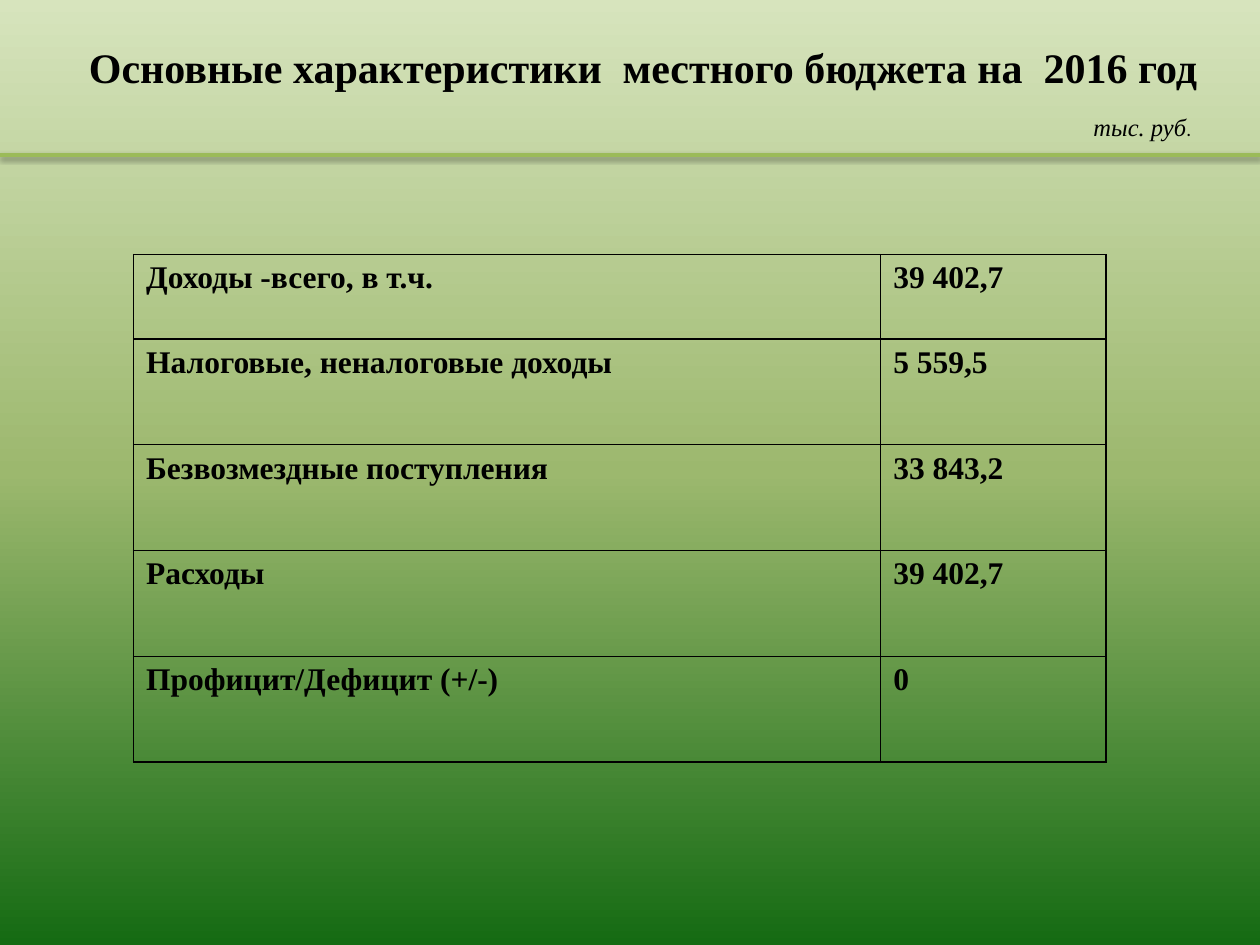
from copy import deepcopy

from lxml import etree
from pptx import Presentation
from pptx.dml.color import RGBColor
from pptx.enum.shapes import MSO_CONNECTOR
from pptx.enum.text import MSO_ANCHOR, PP_ALIGN
from pptx.oxml.ns import qn
from pptx.util import Inches, Pt

STRAIGHT = MSO_CONNECTOR.STRAIGHT
TOP = MSO_ANCHOR.TOP
CENTER = PP_ALIGN.CENTER
TITLE_ONLY = 5

COLORS = {"light": "D7E4BD", "middle": "9CB86E", "dark": "156B13",
          "rule": "9BBB59", "black": "000000"}
SERIF, SANS = "Times New Roman", "Calibri"

BUDGET = [
    ("Доходы -всего, в т.ч.", "39 402,7"),
    ("Налоговые, неналоговые доходы", "5 559,5"),
    ("Безвозмездные поступления", "33 843,2"),
    ("Расходы", "39 402,7"),
    ("Профицит/Дефицит (+/-)", "0"),
]
COL_WIDTHS = (5.93, 1.79)
ROW_HEIGHTS = (0.67, 0.84, 0.84, 0.84, 0.84)


def rgb(name):
    return RGBColor.from_string(COLORS[name])


def add_run(p, text, size, font=SERIF, bold=False, italic=False):
    r = p.add_run()
    r.text = text
    r.font.size = Pt(size)
    r.font.name = font
    r.font.bold = bold
    r.font.italic = italic
    r.font.color.rgb = rgb("black")


def set_background(s):
    """Fill the slide with a three-stop gradient running downwards."""
    fill = s.background.fill
    fill.gradient()
    fill.gradient_angle = 270
    gs_list = s.element.find(".//" + qn("a:gsLst"))
    gs_list.append(deepcopy(gs_list[-1]))
    for stop, position, name in zip(fill.gradient_stops, (0, 0.5, 1),
                                    ("light", "middle", "dark")):
        stop.position = position
        stop.color.rgb = rgb(name)


def add_title(s, text):
    title = s.shapes.title
    title.left, title.top = Inches(0.52), Inches(0.28)
    title.width, title.height = Inches(9.17), Inches(0.81)
    tf = title.text_frame
    tf.word_wrap = False
    tf.vertical_anchor = TOP
    p = tf.paragraphs[0]
    p.alignment = CENTER
    add_run(p, text, 24, bold=True)


def add_rule(s):
    """Draw the shadowed line under the heading."""
    y = Inches(1.23)
    rule = s.shapes.add_connector(STRAIGHT, Inches(10), y, 0, y)
    rule.line.color.rgb = rgb("rule")
    rule.line.width = Pt(2)
    effects = etree.SubElement(rule.element.spPr, qn("a:effectLst"))
    shadow = etree.SubElement(effects, qn("a:outerShdw"), blurRad=str(Pt(3.1)),
                              dist=str(Pt(1.6)), dir="5400000", rotWithShape="0")
    color = etree.SubElement(shadow, qn("a:srgbClr"), val=COLORS["black"])
    etree.SubElement(color, qn("a:alpha"), val="38000")


def add_unit_label(s):
    box = s.shapes.add_textbox(Inches(8.58), Inches(0.84), Inches(1.42), Inches(0.39))
    tf = box.text_frame
    tf.word_wrap = True
    p = tf.paragraphs[0]
    add_run(p, "тыс. руб", 14, italic=True)
    add_run(p, ".", 11, font=SANS)


def set_borders(cell):
    tc_pr = cell._tc.get_or_add_tcPr()
    for i, side in enumerate(("a:lnL", "a:lnR", "a:lnT", "a:lnB")):
        ln = etree.Element(qn(side), w=str(Pt(1)))
        fill = etree.SubElement(ln, qn("a:solidFill"))
        etree.SubElement(fill, qn("a:srgbClr"), val=COLORS["black"])
        tc_pr.insert(i, ln)


def add_budget_table(s):
    frame = s.shapes.add_table(len(BUDGET), len(COL_WIDTHS), Inches(1.06), Inches(2.02),
                               Inches(sum(COL_WIDTHS)), Inches(sum(ROW_HEIGHTS)))
    table = frame.table
    table.first_row = table.horz_banding = False
    for column, width in zip(table.columns, COL_WIDTHS):
        column.width = Inches(width)
    for row, height, values in zip(table.rows, ROW_HEIGHTS, BUDGET):
        row.height = Inches(height)
        for cell, text in zip(row.cells, values):
            cell.fill.background()
            set_borders(cell)
            add_run(cell.text_frame.paragraphs[0], text, 18, bold=True)


def main():
    prs = Presentation()
    prs.slide_width, prs.slide_height = Inches(10), Inches(7.5)
    s = prs.slides.add_slide(prs.slide_layouts[TITLE_ONLY])
    set_background(s)
    add_rule(s)
    add_title(s, "Основные характеристики  местного бюджета на  2016 год")
    add_budget_table(s)
    add_unit_label(s)
    prs.save("out.pptx")


if __name__ == "__main__":
    main()
